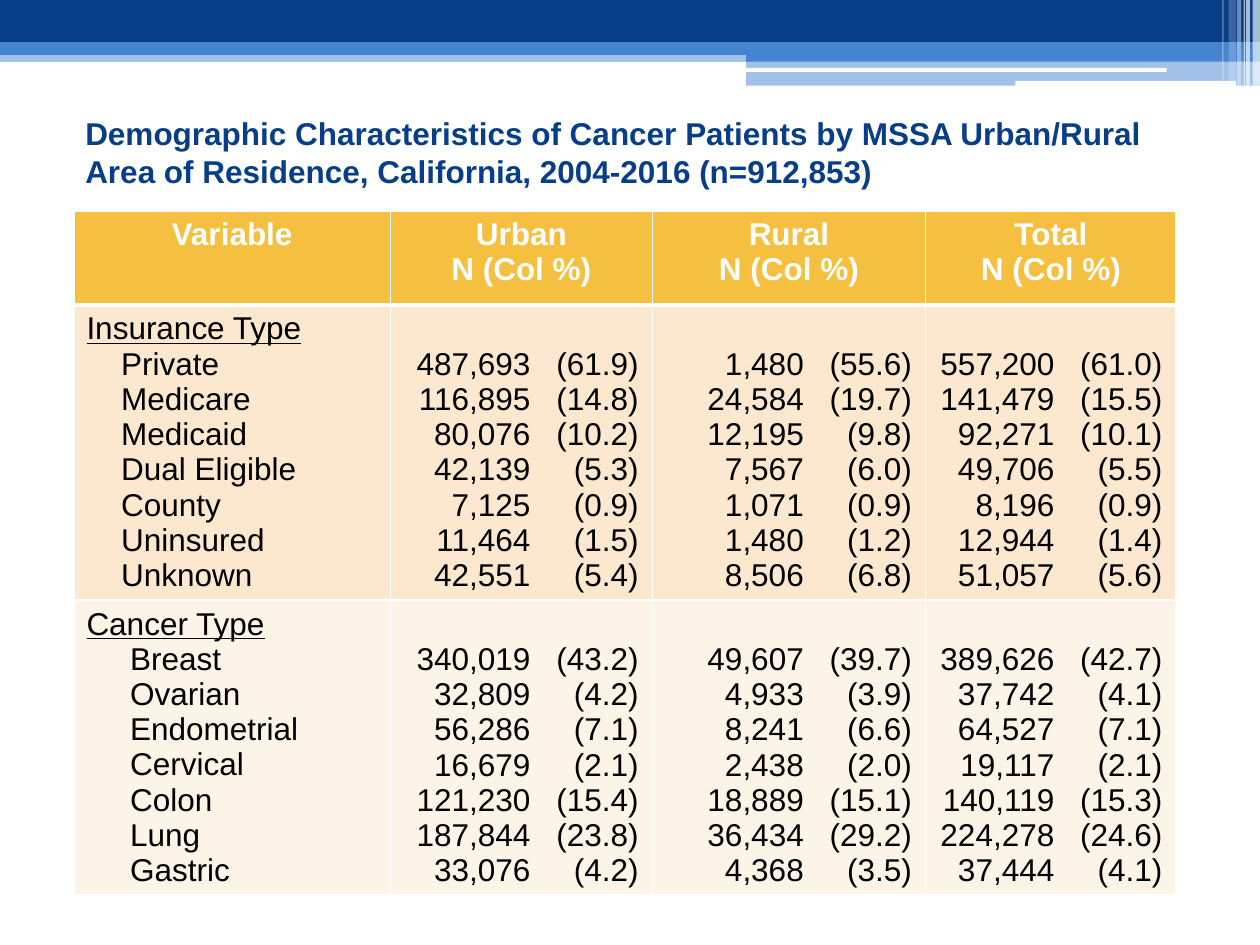
import lxml.etree
import pptx
import pptx.dml.color
import pptx.enum.shapes
import pptx.enum.text
import pptx.oxml.ns
import pptx.util

Cm = pptx.util.Cm
Pt = pptx.util.Pt
qn = pptx.oxml.ns.qn
Align = pptx.enum.text.PP_ALIGN
Shape = pptx.enum.shapes.MSO_SHAPE


def paint(fill, color, opacity=100):
    fill.solid()
    fill.fore_color.rgb = pptx.dml.color.RGBColor.from_string(color)
    if opacity < 100:
        tint = fill._xPr.find(".//" + qn("a:srgbClr"))
        lxml.etree.SubElement(tint, qn("a:alpha"), val=str(opacity * 1000))


def style(para, color, bold=False, underline=False):
    para.font.name = "Arial"
    para.font.size = Pt(18)
    para.font.bold = bold
    para.font.underline = underline
    paint(para.font.fill, color)


deck = pptx.Presentation()
deck.slide_width = Cm(25.4)
deck.slide_height = Cm(19.05)
page = deck.slides.add_slide(deck.slide_layouts[6])

bands = [
    (Shape.RECTANGLE, 0, 1.02, 25.4, 0.23, "4584D3", 50),
    (Shape.RECTANGLE, 0, 0, 25.4, 0.86, "073E87", 100),
    (Shape.RECTANGLE, 0, 0.86, 25.4, 0.25, "4584D3", 100),
    (Shape.RECTANGLE, 15.04, 0.99, 10.36, 0.25, "4584D3", 100),
    (Shape.RECTANGLE, 15.04, 1.22, 10.36, 0.51, "4584D3", 50),
    (Shape.ROUNDED_RECTANGLE, 15.01, 1.37, 8.51, 0.08, "FFFFFF", 100),
    (Shape.ROUNDED_RECTANGLE, 20.47, 1.63, 4.45, 0.1, "FFFFFF", 100),
    (Shape.RECTANGLE, 25.25, 0, 0.15, 1.73, "FFFFFF", 65),
    (Shape.RECTANGLE, 25.12, 0, 0.08, 1.73, "FFFFFF", 65),
    (Shape.RECTANGLE, 25.07, 0, 0.03, 1.73, "FFFFFF", 60),
    (Shape.RECTANGLE, 24.94, 0, 0.08, 1.73, "FFFFFF", 40),
    (Shape.RECTANGLE, 24.77, 0, 0.15, 1.63, "FFFFFF", 20),
    (Shape.RECTANGLE, 24.64, 0, 0.03, 1.63, "FFFFFF", 30),
]
for kind, left, top, width, height, color, opacity in bands:
    band = page.shapes.add_shape(kind, Cm(left), Cm(top), Cm(width), Cm(height))
    band.shadow.inherit = False
    band.line.fill.background()
    paint(band.fill, color, opacity)

title = page.shapes.add_textbox(Cm(1.47), Cm(2.11), Cm(22.86), Cm(1.9)).text_frame
title.word_wrap = True
title.vertical_anchor = pptx.enum.text.MSO_ANCHOR.MIDDLE
title.text = (
    "Demographic Characteristics of Cancer Patients by MSSA Urban/Rural "
    "Area of Residence, California, 2004-2016 (n=912,853)"
)
title.paragraphs[0].line_spacing = Pt(21.7)
style(title.paragraphs[0], "073E87", bold=True)

headings = ["Variable", "Urban\nN (Col %)", "Rural\nN (Col %)", "Total\nN (Col %)"]
groups = [
    ("Insurance Type", "FBE8CF", 0.7, [
        ("Private", "487,693 (61.9)", "1,480 (55.6)", "557,200 (61.0)"),
        ("Medicare", "116,895 (14.8)", "24,584 (19.7)", "141,479 (15.5)"),
        ("Medicaid", "80,076 (10.2)", "12,195 (9.8)", "92,271 (10.1)"),
        ("Dual Eligible", "42,139 (5.3)", "7,567 (6.0)", "49,706 (5.5)"),
        ("County", "7,125 (0.9)", "1,071 (0.9)", "8,196 (0.9)"),
        ("Uninsured", "11,464 (1.5)", "1,480 (1.2)", "12,944 (1.4)"),
        ("Unknown", "42,551 (5.4)", "8,506 (6.8)", "51,057 (5.6)"),
    ]),
    ("Cancer Type", "FDF4E8", 0.88, [
        ("Breast", "340,019 (43.2)", "49,607 (39.7)", "389,626 (42.7)"),
        ("Ovarian", "32,809 (4.2)", "4,933 (3.9)", "37,742 (4.1)"),
        ("Endometrial", "56,286 (7.1)", "8,241 (6.6)", "64,527 (7.1)"),
        ("Cervical", "16,679 (2.1)", "2,438 (2.0)", "19,117 (2.1)"),
        ("Colon", "121,230 (15.4)", "18,889 (15.1)", "140,119 (15.3)"),
        ("Lung", "187,844 (23.8)", "36,434 (29.2)", "224,278 (24.6)"),
        ("Gastric", "33,076 (4.2)", "4,368 (3.5)", "37,444 (4.1)"),
    ]),
]
widths = [6.38, 5.28, 5.51, 5.05]
heights = [1.9, 5.95, 5.93]
table = page.shapes.add_table(
    3, 4, Cm(1.49), Cm(4.25), Cm(sum(widths)), Cm(sum(heights))
).table
for column, width in zip(table.columns, widths):
    column.width = Cm(width)
for row, height in zip(table.rows, heights):
    row.height = Cm(height)

for cell, heading in zip(table.rows[0].cells, headings):
    cell.text = heading
    for para in cell.text_frame.paragraphs:
        para.alignment = Align.CENTER
        style(para, "FFFFFF", bold=True)

for row, (group, color, indent, records) in enumerate(groups, 1):
    for column, values in enumerate(zip(*records)):
        cell = table.cell(row, column)
        if column == 0:
            cell.text = "\n".join((group,) + values)
        else:
            cell.margin_top = Cm(0.84)
            cell.text = "\n".join("\t" + value.replace(" ", "\t") for value in values)
        for line, para in enumerate(cell.text_frame.paragraphs):
            para.alignment = Align.LEFT
            para.line_spacing = Pt(20.15)
            properties = para._p.get_or_add_pPr()
            if column:
                stops = lxml.etree.SubElement(properties, qn("a:tabLst"))
                for inset in (2.71, 0.53):
                    place = Cm(widths[column] - inset)
                    lxml.etree.SubElement(stops, qn("a:tab"), pos=str(place), algn="r")
            elif line:
                properties.set("marL", str(Cm(indent)))
                properties.set("indent", "0")
            style(para, "000000", underline=column == 0 and line == 0)

fills = ["F5C040"] + [group[1] for group in groups]
for row, color in enumerate(fills):
    for cell in table.rows[row].cells:
        paint(cell.fill, color)
        properties = cell._tc.get_or_add_tcPr()
        for position, side in enumerate(("lnL", "lnR", "lnT", "lnB")):
            thick = (row, side) in ((0, "lnB"), (1, "lnT"))
            border = lxml.etree.Element(qn("a:" + side), w=str(Pt(3 if thick else 1)))
            solid = lxml.etree.SubElement(border, qn("a:solidFill"))
            lxml.etree.SubElement(solid, qn("a:srgbClr"), val="FFFFFF")
            properties.insert(position, border)

deck.save("out.pptx")
